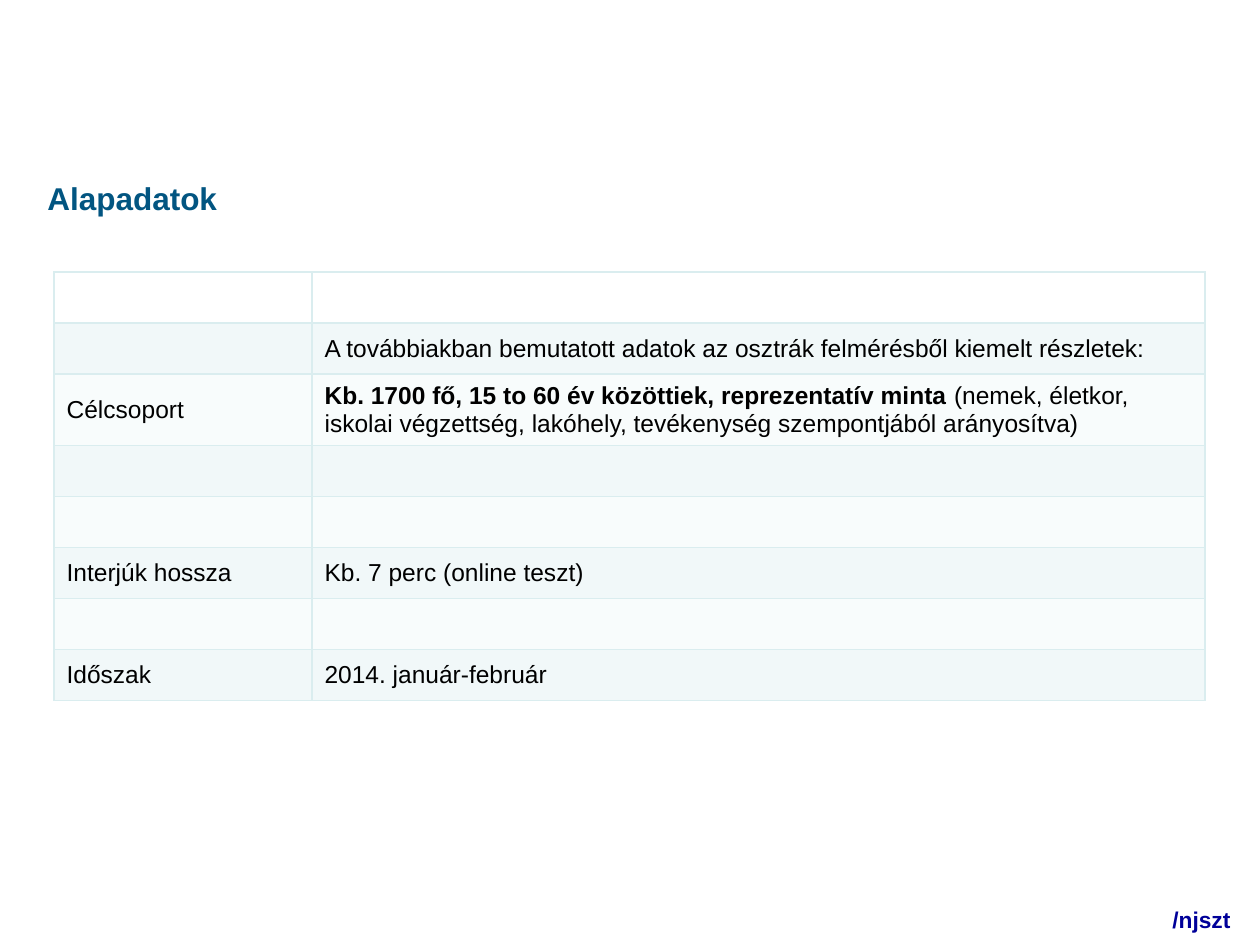
import pptx
import pptx.dml.color
import pptx.enum.text
import pptx.oxml
import pptx.util

RGBColor = pptx.dml.color.RGBColor
WHITE = RGBColor(0xFF, 0xFF, 0xFF)
BLACK = RGBColor(0x00, 0x00, 0x00)
NAVY = RGBColor(0x00, 0x00, 0x99)
TEAL = RGBColor(0x02, 0x55, 0x81)
BORDER = RGBColor(0xDA, 0xED, 0xEF)
BAND_DARK = RGBColor(0xF1, 0xF8, 0xF9)
BAND_LIGHT = RGBColor(0xF8, 0xFC, 0xFC)

PX = 914400 // 126
FONT = "Arial"
LABEL_WIDTH = 258

# Each row is a label and the spans (text, bold) of its value
ROWS = [
    ("", []),
    ("", [("A továbbiakban bemutatott adatok az osztrák felmérésből "
           "kiemelt részletek:", False)]),
    ("Célcsoport", [
        ("Kb. 1700 fő, 15 to 60 év közöttiek, reprezentatív minta ", True),
        ("(nemek, életkor, iskolai végzettség, lakóhely, tevékenység "
         "szempontjából arányosítva)", False)]),
    ("", []),
    ("", []),
    ("Interjúk hossza", [("Kb. 7 perc (online teszt)", False)]),
    ("", []),
    ("Időszak", [("2014. január-február", False)]),
]


def emu(*lengths):
    return [pptx.util.Emu(length * PX) for length in lengths]


def set_font(font, size, color):
    font.name = FONT
    font.size = pptx.util.Pt(size)
    font.color.rgb = color


def add_label(page, box, text, size, color):
    frame = page.shapes.add_textbox(*emu(*box)).text_frame
    frame.word_wrap = True
    para = frame.paragraphs[0]
    para.text = text
    set_font(para.font, size, color)
    para.font.bold = True


def add_borders(cell):
    properties = cell._tc.get_or_add_tcPr()
    for side in ("lnL", "lnR", "lnT", "lnB"):
        properties.append(pptx.oxml.parse_xml(
            f'<a:{side} xmlns:a="http://schemas.openxmlformats.org/drawingml/2006/main"'
            f' w="12700"><a:solidFill><a:srgbClr val="{BORDER}"/></a:solidFill></a:{side}>'))


def fill_cell(cell, spans, color):
    add_borders(cell)
    cell.fill.solid()
    cell.fill.fore_color.rgb = color
    cell.vertical_anchor = pptx.enum.text.MSO_ANCHOR.MIDDLE
    para = cell.text_frame.paragraphs[0]
    set_font(para.font, 14, BLACK)
    for text, bold in spans:
        span = para.add_run()
        span.text = text
        span.font.bold = bold


def add_facts_table(page, box):
    left, top, width, height = box
    frame = page.shapes.add_table(len(ROWS), 2, *emu(left, top, width, height))
    table = frame.table
    table.first_row = False
    table.horz_banding = False
    widths = emu(LABEL_WIDTH, width - LABEL_WIDTH)
    for column, column_width in zip(table.columns, widths):
        column.width = column_width
    for index, (label, value) in enumerate(ROWS):
        if index == 0:
            color = WHITE
        else:
            color = BAND_DARK if index % 2 else BAND_LIGHT
        label_spans = [(label, False)] if label else []
        for column, spans in enumerate((label_spans, value)):
            fill_cell(table.cell(index, column), spans, color)


def main():
    deck = pptx.Presentation()
    deck.slide_width, deck.slide_height = emu(1260, 945)
    page = deck.slides.add_slide(deck.slide_layouts[6])
    page.background.fill.solid()
    page.background.fill.fore_color.rgb = WHITE

    # Footer handle, title and table of facts
    add_label(page, (1160, 900, 184, 65), "/njszt", 13, NAVY)
    add_label(page, (35, 173, 1134, 50), "Alapadatok", 18, TEAL)
    add_facts_table(page, (54, 272, 1151, 51 * len(ROWS)))
    deck.save("out.pptx")


if __name__ == "__main__":
    main()
